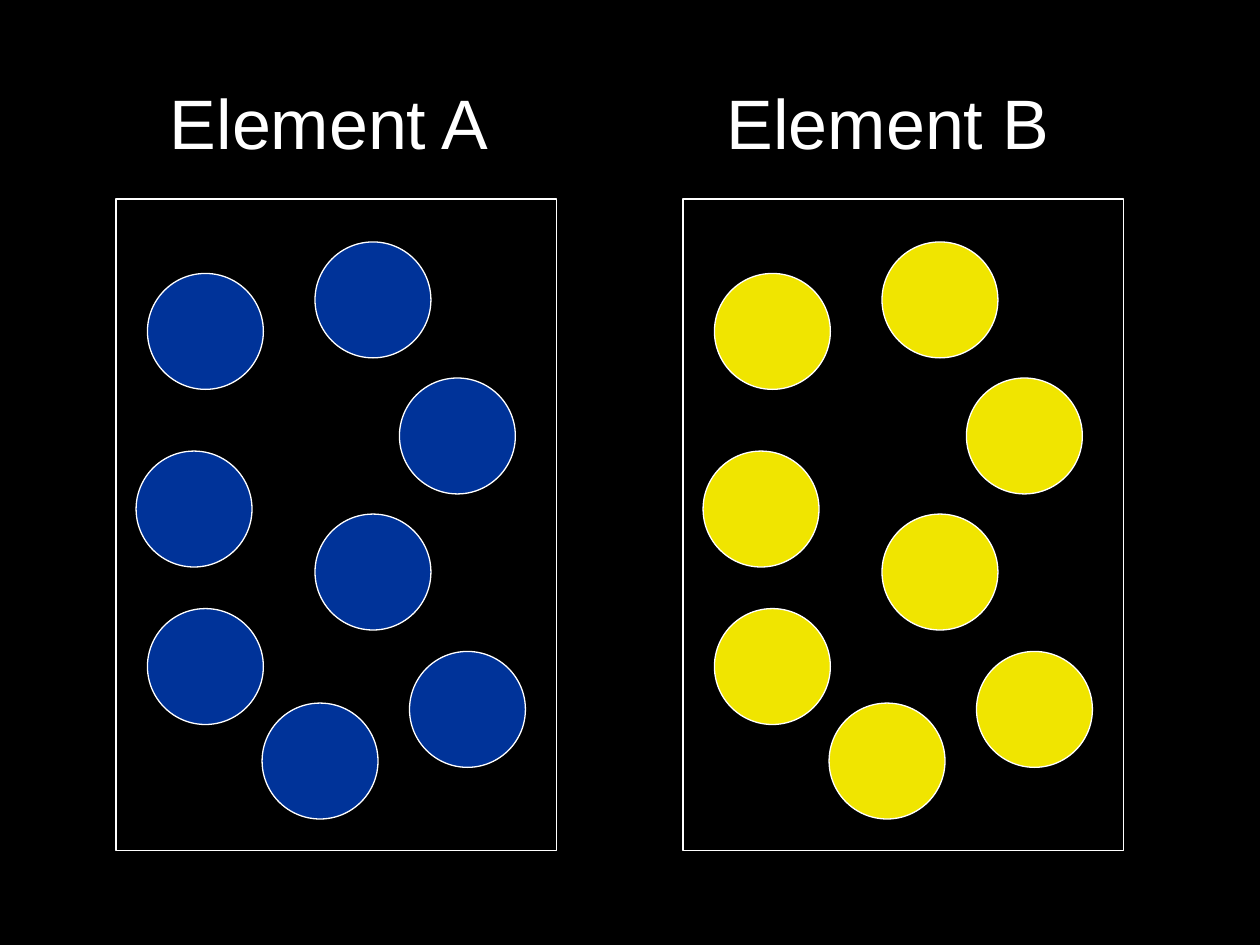
from pptx import Presentation
from pptx.dml.color import RGBColor
from pptx.enum import shapes, text
from pptx.util import Inches, Pt

# label, atom colour, box left, label left
PANELS = [
    ("Element A", "003399", 0.92, 1.25),
    ("Element B", "F0E500", 5.42, 5.67),
]
# atom positions, measured from the left edge of the box and the slide top
ATOMS = [(2.33, 5.17), (0.25, 2.17), (0.16, 3.58), (1.58, 4.08),
         (1.58, 1.92), (2.25, 3), (1.16, 5.58), (0.25, 4.83)]
ATOM = 0.92
BOX_TOP, BOX_W, BOX_H = 1.58, 3.5, 5.17
WHITE, BLACK = "FFFFFF", "000000"


def paint(fill, color):
    fill.solid()
    fill.fore_color.rgb = RGBColor.from_string(color)


def add_shape(slide, kind, x, y, w, h, color=None):
    """Add a white-outlined shape, hollow if no colour is given."""
    shape = slide.shapes.add_shape(kind, *map(Inches, (x, y, w, h)))
    shape.shadow.inherit = False
    if color:
        paint(shape.fill, color)
    else:
        shape.fill.background()
    paint(shape.line.fill, WHITE)
    shape.line.width = Pt(0.75)


def add_label(slide, label, x):
    box = slide.shapes.add_textbox(*map(Inches, (x, 0.58, 2.76, 0.77)))
    frame = box.text_frame
    frame.text = label
    frame.word_wrap = False
    frame.auto_size = text.MSO_AUTO_SIZE.SHAPE_TO_FIT_TEXT
    font = frame.paragraphs[0].runs[0].font
    font.name, font.size = "Arial", Pt(40)
    paint(font.fill, WHITE)


def main():
    deck = Presentation()
    deck.slide_width, deck.slide_height = Inches(10), Inches(7.5)
    slide = deck.slides.add_slide(deck.slide_layouts[6])
    paint(slide.background.fill, BLACK)
    kinds = shapes.MSO_SHAPE
    for label, color, left, text_left in PANELS:
        for x, y in ATOMS:
            add_shape(slide, kinds.OVAL, left + x, y, ATOM, ATOM, color)
        add_shape(slide, kinds.RECTANGLE, left, BOX_TOP, BOX_W, BOX_H)
        add_label(slide, label, text_left)
    deck.save("out.pptx")


if __name__ == "__main__":
    main()
